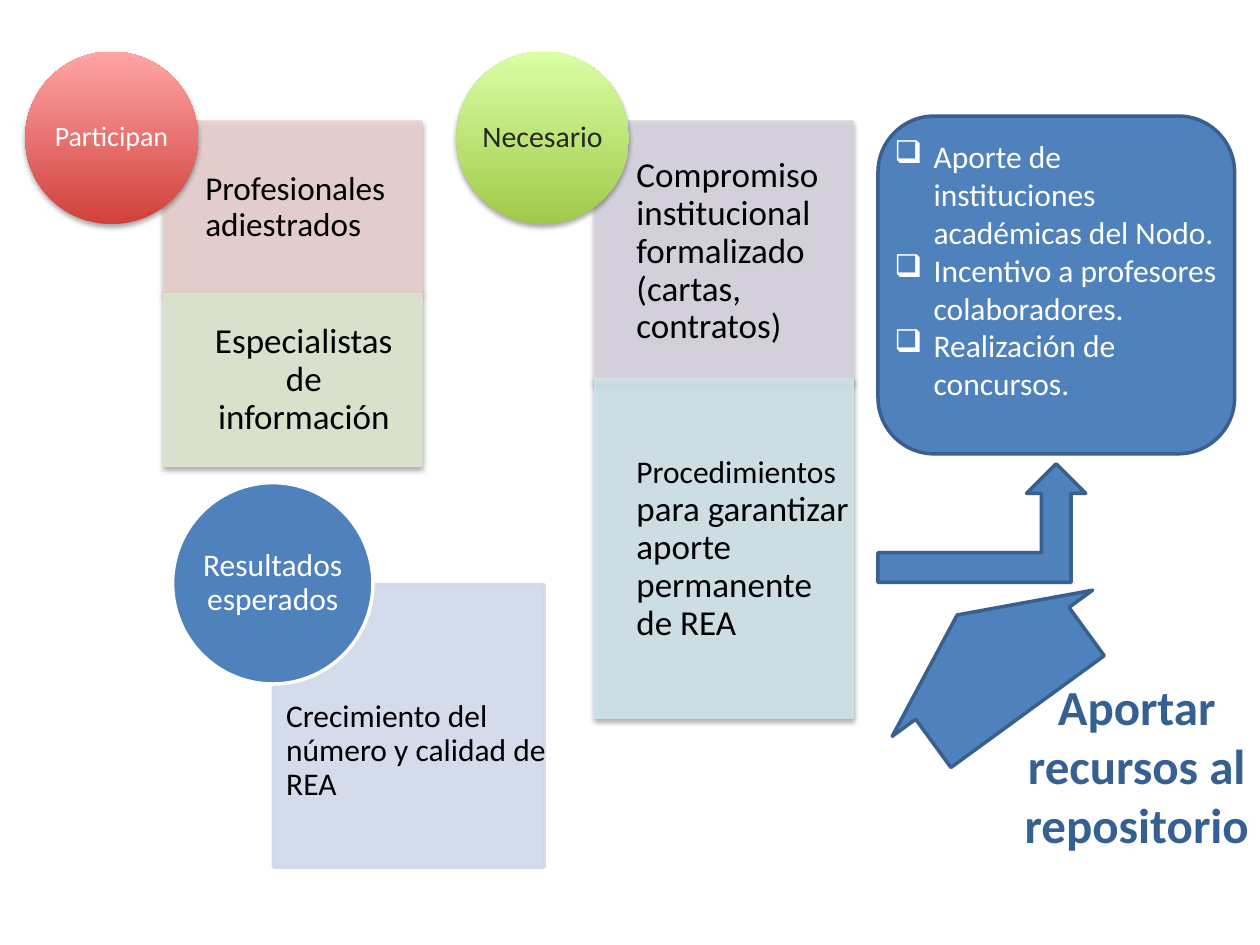
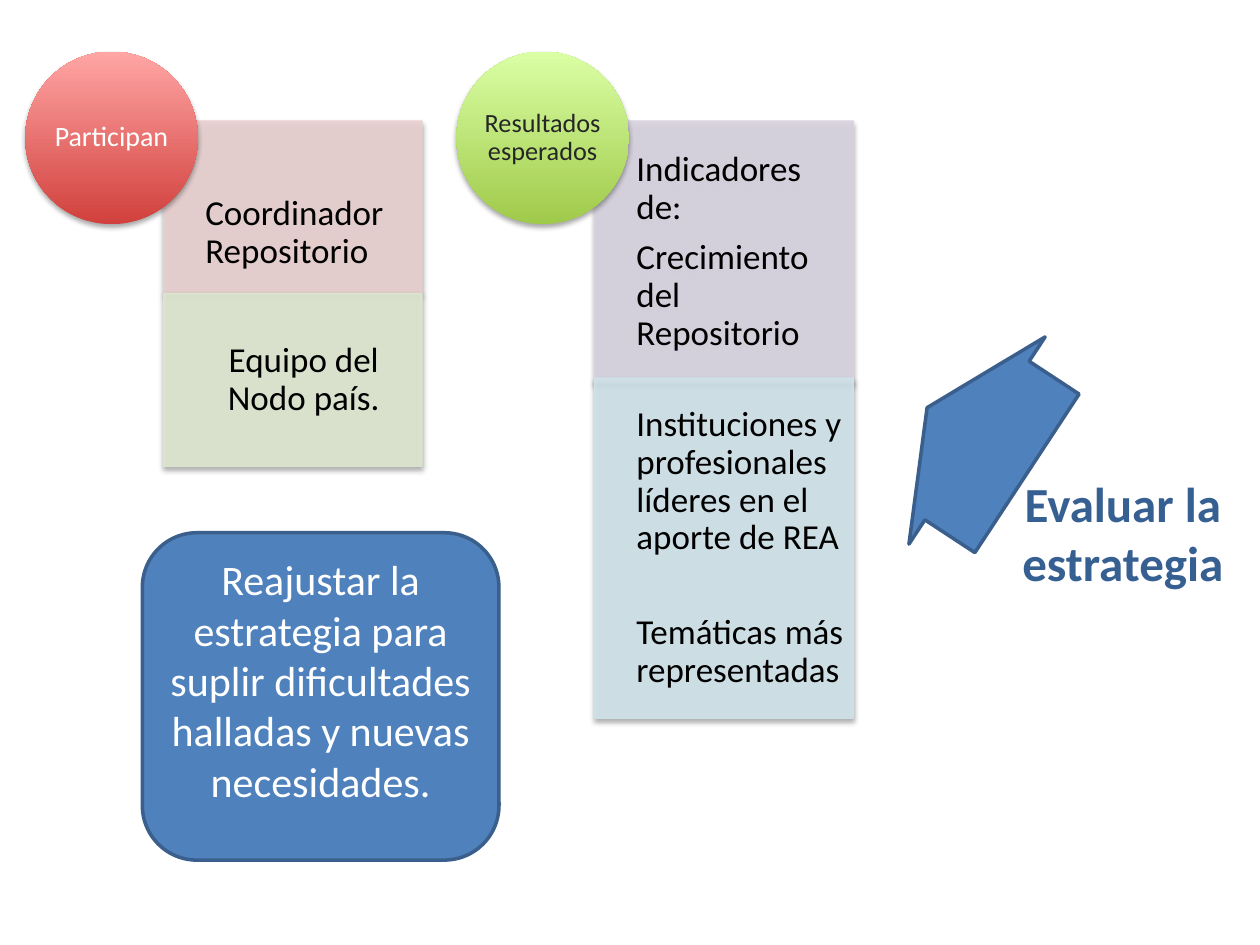
from dataclasses import dataclass

from lxml.etree import SubElement
from pptx import Presentation
from pptx.dml.color import RGBColor
from pptx.enum.shapes import MSO_SHAPE
from pptx.enum.text import MSO_ANCHOR, MSO_AUTO_SIZE, PP_ALIGN
from pptx.oxml.ns import qn
from pptx.util import Cm, Pt

FONT = "Calibri"
BLACK = RGBColor(0x00, 0x00, 0x00)
WHITE = RGBColor(0xFF, 0xFF, 0xFF)
CHARCOAL = RGBColor(0x26, 0x26, 0x26)
BLUE = RGBColor(0x4F, 0x81, 0xBD)
BLUE_EDGE = RGBColor(0x3A, 0x5F, 0x8C)
TITLE_BLUE = RGBColor(0x37, 0x60, 0x92)
PALE_BLUE = RGBColor(0xD0, 0xD8, 0xE8)
PINK = RGBColor(0xE8, 0xD0, 0xD0)
SAGE = RGBColor(0xDE, 0xE7, 0xD1)
LILAC = RGBColor(0xD8, 0xD3, 0xE0)
AQUA = RGBColor(0xD0, 0xE3, 0xEA)
RED_GRADIENT = (RGBColor(0xD1, 0x40, 0x3C), RGBColor(0xFF, 0xA6, 0xA5))
GREEN_GRADIENT = (RGBColor(0xA0, 0xCA, 0x4A), RGBColor(0xDA, 0xFF, 0xA5))

BADGE = 3.48
CELL_DX, CELL_DY, CELL_WIDTH = 2.79, 1.4, 5.21
COLUMN_TOP = 1.04
PARTICIPANTS_LEFT, NEEDS_LEFT = 0.51, 9.2


@dataclass
class Cell:
    """One coloured cell of a column, measured from the first cell's top."""
    color: RGBColor
    offset: float
    height: float
    paragraphs: list
    insets: tuple
    align: PP_ALIGN = PP_ALIGN.LEFT
    gap: float = 7


def write(frame, paragraphs, color, align=PP_ALIGN.LEFT, insets=(0, 0, 0, 0),
          anchor=MSO_ANCHOR.MIDDLE, spacing=0.9, gap=0):
    """Fill a text frame with paragraphs, each a list of (text, size) runs."""
    frame.word_wrap = True
    frame.auto_size = MSO_AUTO_SIZE.NONE
    frame.vertical_anchor = anchor
    (frame.margin_left, frame.margin_top,
     frame.margin_right, frame.margin_bottom) = map(Cm, insets)
    for index, runs in enumerate(paragraphs):
        paragraph = frame.add_paragraph() if index else frame.paragraphs[0]
        paragraph.alignment = align
        paragraph.line_spacing = spacing
        paragraph.space_before = Pt(gap if index else 0)
        for text, size in runs:
            run = paragraph.add_run()
            run.text = text
            run.font.name = FONT
            run.font.size = Pt(size)
            run.font.color.rgb = color


def add_block(slide, kind, box, fill, edge=None, width=2):
    """Add a preset shape with a plain fill and an optional edge."""
    block = slide.shapes.add_shape(kind, *map(Cm, box))
    block.shadow.inherit = False
    block.fill.solid()
    block.fill.fore_color.rgb = fill
    if edge is None:
        block.line.fill.background()
    else:
        block.line.color.rgb = edge
        block.line.width = Pt(width)
    return block


def set_alpha(block, percent=90):
    """Make the fill and edge of a block slightly transparent."""
    for color in list(block.element.spPr.iter(qn("a:srgbClr"))):
        SubElement(color, qn("a:alpha"), val=str(percent * 1000))


def cast_shadow(block):
    """Give a block a soft shadow below it."""
    effects = block.element.spPr.find(qn("a:effectLst"))
    shadow = SubElement(effects, qn("a:outerShdw"), blurRad=str(Pt(3.1)),
                        dist=str(Pt(1.8)), dir="5400000", rotWithShape="0")
    color = SubElement(shadow, qn("a:srgbClr"), val=str(BLACK))
    SubElement(color, qn("a:alpha"), val="35000")


def add_column(slide, left, label, size, gradient, label_color, cells):
    """Draw stacked cells with a round badge over their top left corner."""
    for cell in cells:
        box = (left + CELL_DX, COLUMN_TOP + CELL_DY + cell.offset, CELL_WIDTH, cell.height)
        block = add_block(slide, MSO_SHAPE.RECTANGLE, box, cell.color, cell.color, 0.75)
        set_alpha(block)
        cast_shadow(block)
        write(block.text_frame, cell.paragraphs, BLACK, cell.align, cell.insets, gap=cell.gap)
    badge = add_block(slide, MSO_SHAPE.OVAL, (left, COLUMN_TOP, BADGE, BADGE), gradient[0])
    badge.fill.gradient()
    badge.fill.gradient_angle = 90
    for stop, color in zip(badge.fill.gradient_stops, gradient):
        stop.color.rgb = color
    cast_shadow(badge)
    write(badge.text_frame, [[(label, size)]], label_color, PP_ALIGN.CENTER)


def add_participants(slide, first, second, first_size, first_top=0.38):
    """Draw the column of people who take part."""
    add_column(slide, PARTICIPANTS_LEFT, "Participan", 16, RED_GRADIENT, WHITE, [
        Cell(PINK, 0, 3.48, [[(first, first_size)]], (0.84, first_top, 0, 0.38)),
        Cell(SAGE, 3.48, 3.48, [[(second, 20)]], (0.84, 0.4, 0.4, 0.4), PP_ALIGN.CENTER),
    ])


def add_needs(slide, label, size, upper, lower, lower_gap=7):
    """Draw the taller column in the middle of the slide."""
    add_column(slide, NEEDS_LEFT, label, size, GREEN_GRADIENT, CHARCOAL, [
        Cell(LILAC, 0, 5.28, upper, (0.84, 0.2, 0.4, 0.2)),
        Cell(AQUA, 5.18, 6.86, lower, (0.84, 0.2, 0, 0.2), gap=lower_gap),
    ])


def add_results(slide, left, top):
    """Draw the expected results card and its round label."""
    card = add_block(slide, MSO_SHAPE.RECTANGLE, (left + 2.03, top + 2.06, 5.46, 5.69),
                     PALE_BLUE, PALE_BLUE)
    set_alpha(card)
    growth = slide.shapes.add_textbox(Cm(left + 2.29), Cm(top + 2.57), Cm(5.46), Cm(5.69))
    write(growth.text_frame, [[("Crecimiento del número y calidad de REA", 18)]], BLACK,
          insets=(0, 0.2, 0.2, 0.2))
    label = add_block(slide, MSO_SHAPE.OVAL, (left, top, 4.04, 4.06), BLUE, WHITE)
    write(label.text_frame, [[("Resultados esperados", 18)]], WHITE, PP_ALIGN.CENTER)


def add_panel(slide, box, texts, size, align=PP_ALIGN.LEFT, bullet=None):
    """Draw a rounded blue panel, with bullets when a mark is given."""
    panel = add_block(slide, MSO_SHAPE.ROUNDED_RECTANGLE, box, BLUE, BLUE_EDGE)
    write(panel.text_frame, [[(text, size)] for text in texts], WHITE, align,
          (0, 0.1, 0, 0), MSO_ANCHOR.TOP, 1.0)
    if bullet:
        for paragraph in panel.text_frame.paragraphs:
            properties = paragraph._p.get_or_add_pPr()
            properties.set("marL", str(Cm(0.79)))
            properties.set("indent", str(Cm(-0.79)))
            SubElement(properties, qn("a:buChar"), char=bullet)


def add_title(slide, text, left, top, height):
    """Place the slide title beside the cycle arrow."""
    title = slide.shapes.title
    title.left, title.top, title.width, title.height = map(Cm, (left, top, 5.59, height))
    write(title.text_frame, [[(text, 28)]], TITLE_BLUE, PP_ALIGN.CENTER,
          (0.25, 0.13, 0.25, 0.13), MSO_ANCHOR.TOP, 1.0)
    title.text_frame.paragraphs[0].runs[0].font.bold = True


def add_cycle_arrow(slide, left, top, rotation):
    """Draw the broad turned arrow that marks the step of the cycle."""
    arrow = add_block(slide, MSO_SHAPE.RIGHT_ARROW, (left, top, 2.41, 5), BLUE, BLUE_EDGE)
    arrow.adjustments[0] = 0.765
    arrow.adjustments[1] = 0.5
    arrow.rotation = rotation


def build_contribution(slide):
    """Build the slide on contributing resources."""
    add_title(slide, "Aportar recursos al repositorio", 20.12, 13.51, 3.84)
    add_panel(slide, (17.7, 2.34, 7.19, 6.81), [
        "Aporte de instituciones académicas del Nodo.",
        "Incentivo a profesores colaboradores.",
        "Realización de concursos.",
    ], 18, bullet="❑")
    add_participants(slide, "Profesionales adiestrados", "Especialistas de información", 19)
    add_needs(
        slide, "Necesario", 17,
        [[("Compromiso institucional formalizado (cartas, contratos)", 20)]],
        [[("Procedimientos", 18), (" para garantizar aporte permanente de REA", 20)]])
    add_results(slide, 3.48, 9.73)
    add_block(slide, MSO_SHAPE.BENT_UP_ARROW, (17.7, 9.35, 4.19, 2.39), BLUE, BLUE_EDGE)
    add_cycle_arrow(slide, 18.8, 10.87, 233.9)


def build_evaluation(slide):
    """Build the slide on evaluating the strategy."""
    add_title(slide, "Evaluar la estrategia", 19.84, 9.42, 2.64)
    add_participants(slide, "Coordinador Repositorio", "Equipo del Nodo país.", 20, 1.43)
    add_needs(
        slide, "Resultados esperados", 15,
        [[("Indicadores de:", 20)], [("Crecimiento del Repositorio", 20)]],
        [[("Instituciones y profesionales líderes en el aporte de REA", 20)],
         [("Temáticas más representadas", 20)]],
        lower_gap=32.6)
    add_cycle_arrow(slide, 18.49, 6.38, 213.3)
    add_panel(slide, (2.87, 10.74, 7.19, 6.6), [
        "Reajustar la estrategia para suplir dificultades halladas y nuevas necesidades.",
    ], 24, PP_ALIGN.CENTER)


def main():
    """Build and save the presentation."""
    deck = Presentation()
    deck.slide_width, deck.slide_height = Cm(25.4), Cm(19.05)
    title_only = deck.slide_layouts[5]
    for build in (build_contribution, build_evaluation):
        build(deck.slides.add_slide(title_only))
    deck.save("out.pptx")


if __name__ == "__main__":
    main()
